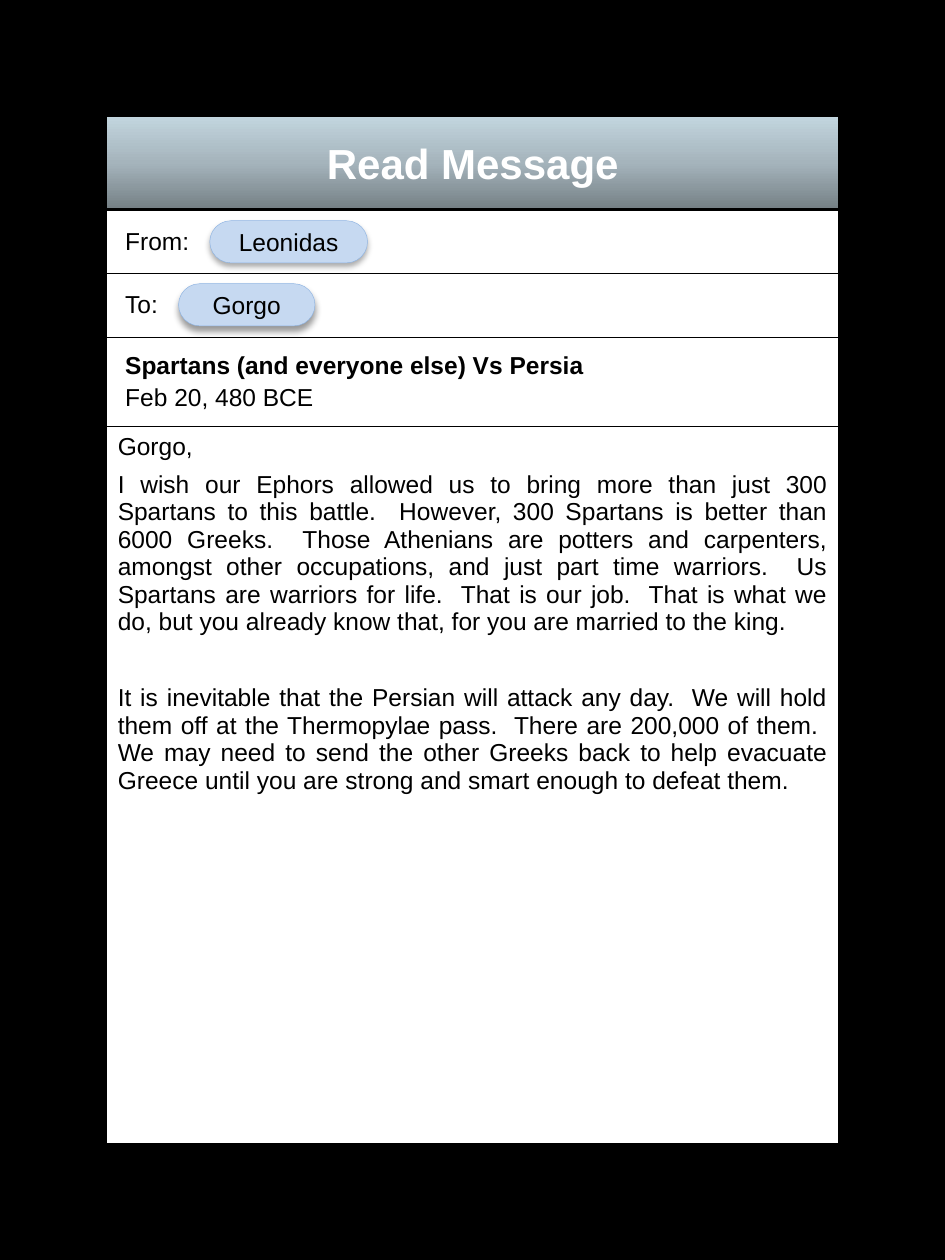
from lxml import etree
from pptx import Presentation
from pptx.dml.color import RGBColor
from pptx.enum.shapes import MSO_SHAPE as SHAPE
from pptx.enum.text import MSO_ANCHOR as ANCHOR, PP_ALIGN as ALIGN
from pptx.oxml.ns import qn
from pptx.util import Cm, Pt

BLACK = RGBColor(0x00, 0x00, 0x00)
WHITE = RGBColor(0xFF, 0xFF, 0xFF)
PILL_FILL = RGBColor(0xC6, 0xD9, 0xF1)
PILL_LINE = RGBColor(0x8E, 0xB4, 0xE3)
HEADER_STOPS = [(0, RGBColor(0x74, 0x7F, 0x84)),
                (50, RGBColor(0xA5, 0xB4, 0xBC)),
                (100, RGBColor(0xC3, 0xD6, 0xDF))]

TITLE = "Read Message"
SUBJECT = "Spartans (and everyone else) Vs Persia"
DATE = "Feb 20, 480 BCE"
BODY = [
    # text, space before in points
    ("Gorgo,", 0),
    ("I wish our Ephors allowed us to bring more than just 300 Spartans to this "
     "battle.  However, 300 Spartans is better than 6000 Greeks.  Those Athenians "
     "are potters and carpenters, amongst other occupations, and just part time "
     "warriors.  Us Spartans are warriors for life.  That is our job.  That is what "
     "we do, but you already know that, for you are married to the king.", 6),
    ("It is inevitable that the Persian will attack any day.  We will hold them off "
     "at the Thermopylae pass.  There are 200,000 of them.  We may need to send the "
     "other Greeks back to help evacuate Greece until you are strong and smart enough "
     "to defeat them.", 27.7),
]
# name, left, top, width (cm); shadow opacity (%), blur, distance (pt)
PILLS = [("Leonidas", 4.23, 4.45, 3.18, 32, 3.5, 2.2),
         ("Gorgo", 3.6, 5.72, 2.75, 40, 4, 3)]

LEFT, TOP, WIDTH, HEIGHT = 2.12, 2.33, 14.82, 20.74
HEADER_H = 1.9
PILL_H = 0.85
ROW_HEIGHTS = [1.28, 1.29, 1.8]
ROW_HEIGHTS.append(HEIGHT - HEADER_H - sum(ROW_HEIGHTS))
INDENT = 0.15


def add_text(tf, text, size=14, color=BLACK, bold=False, align=ALIGN.LEFT,
             before=0, indent=0):
    """Fill the empty first paragraph, or append a new one."""
    p = tf.paragraphs[0] if not tf.text else tf.add_paragraph()
    p.alignment = align
    if before:
        p.space_before = Pt(before)
    if indent:
        pPr = p._p.get_or_add_pPr()
        pPr.set("marL", str(Cm(indent)))
        pPr.set("indent", "0")
    r = p.add_run()
    r.text = text
    r.font.name, r.font.size, r.font.bold = "Arial", Pt(size), bold
    r.font.color.rgb = color


def add_color(parent, color):
    return etree.SubElement(parent, qn("a:srgbClr"), val=str(color))


def add_box(kind, left, top, width, height, fill, line, weight):
    sp = s.shapes.add_shape(kind, Cm(left), Cm(top), Cm(width), Cm(height))
    sp.shadow.inherit = False
    sp.fill.solid()
    sp.fill.fore_color.rgb = fill
    sp.line.color.rgb = line
    sp.line.width = Pt(weight)
    sp.text_frame.vertical_anchor = ANCHOR.MIDDLE
    return sp


def set_gradient(sp, stops):
    sp.fill.gradient()
    sp.fill.gradient_angle = 90
    gs_list = sp._element.spPr.find(".//" + qn("a:gsLst"))
    gs_list.clear()
    for pos, color in stops:
        add_color(etree.SubElement(gs_list, qn("a:gs"), pos=str(pos * 1000)), color)


def add_drop_shadow(sp, opacity, blur, dist):
    effects = sp._element.spPr.find(qn("a:effectLst"))
    shadow = etree.SubElement(effects, qn("a:outerShdw"), blurRad=str(Pt(blur)),
                              dist=str(Pt(dist)), dir="5400000", rotWithShape="0")
    etree.SubElement(add_color(shadow, BLACK), qn("a:alpha"), val=str(opacity * 1000))


def set_borders(cell, color, weight):
    tcPr = cell._tc.get_or_add_tcPr()
    for side in ("lnL", "lnR", "lnT", "lnB"):
        ln = etree.SubElement(tcPr, qn("a:" + side), w=str(Pt(weight)))
        add_color(etree.SubElement(ln, qn("a:solidFill")), color)


prs = Presentation()
prs.slide_width, prs.slide_height = Cm(19.05), Cm(25.4)
s = prs.slides.add_slide(prs.slide_layouts[6])
s.background.fill.solid()
s.background.fill.fore_color.rgb = BLACK

add_box(SHAPE.RECTANGLE, LEFT, TOP, WIDTH, HEIGHT, WHITE, BLACK, 2)
header = add_box(SHAPE.RECTANGLE, LEFT, TOP, WIDTH, HEADER_H, WHITE, BLACK, 2)
set_gradient(header, HEADER_STOPS)
add_text(header.text_frame, TITLE, size=24, color=WHITE, bold=True, align=ALIGN.CENTER)

table = s.shapes.add_table(len(ROW_HEIGHTS), 1, Cm(LEFT), Cm(TOP + HEADER_H),
                           Cm(WIDTH), Cm(HEIGHT - HEADER_H)).table
table.first_row = table.horz_banding = False
for row, height in zip(table.rows, ROW_HEIGHTS):
    row.height = Cm(height)
    cell = row.cells[0]
    set_borders(cell, BLACK, 1)
    cell.fill.background()
    cell.vertical_anchor = ANCHOR.MIDDLE

sender, recipient, subject, body = [row.cells[0] for row in table.rows]
add_text(sender.text_frame, "From:", indent=INDENT)
add_text(recipient.text_frame, "To:", indent=INDENT)
add_text(subject.text_frame, SUBJECT, bold=True, indent=INDENT)
add_text(subject.text_frame, DATE, before=3, indent=INDENT)
body.vertical_anchor = ANCHOR.TOP
for text, before in BODY:
    add_text(body.text_frame, text, align=ALIGN.JUSTIFY, before=before)

for name, left, top, width, *shadow in PILLS:
    pill = add_box(SHAPE.ROUNDED_RECTANGLE, left, top, width, PILL_H,
                   PILL_FILL, PILL_LINE, 0.25)
    pill.adjustments[0] = 0.5
    add_drop_shadow(pill, *shadow)
    add_text(pill.text_frame, name, align=ALIGN.CENTER)

prs.save("out.pptx")
